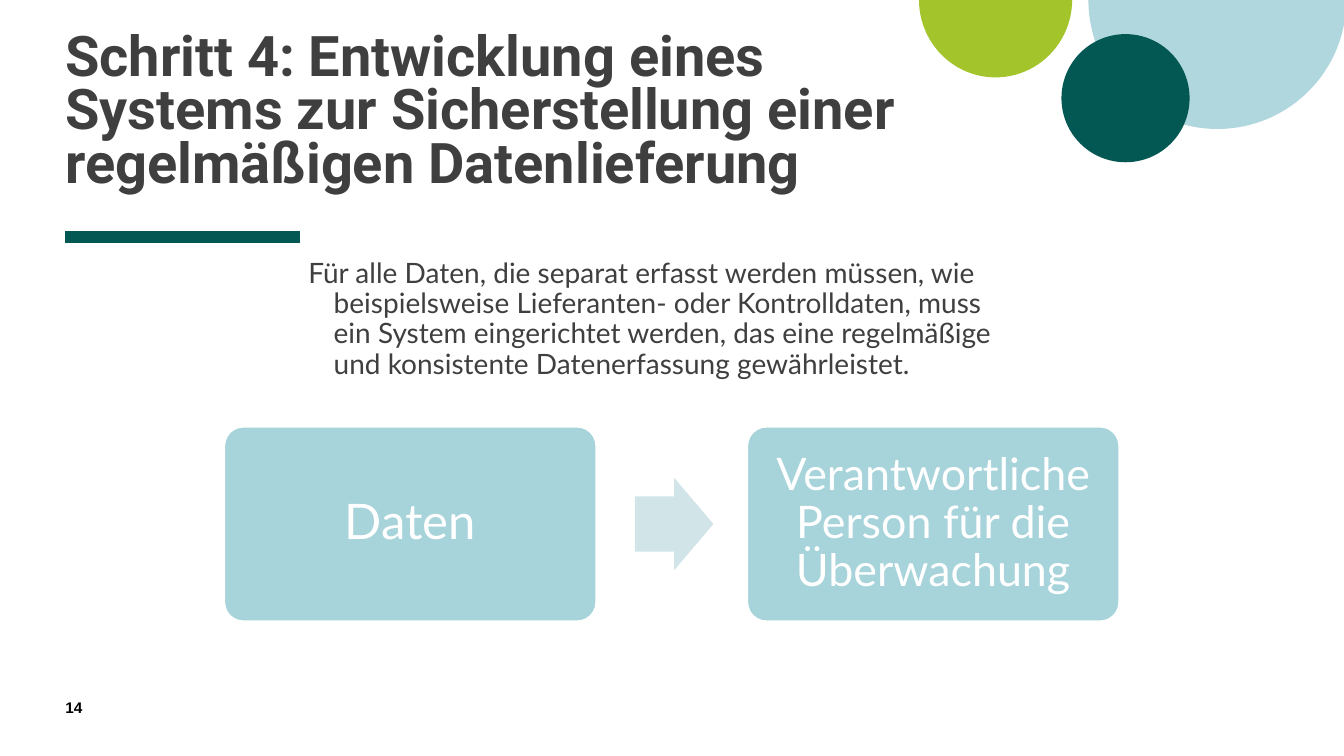
from lxml import etree
from pptx import Presentation
from pptx import util as u
from pptx.dml.color import RGBColor
from pptx.enum import shapes, text
from pptx.oxml.ns import qn

COLORS = {
    "ink": "3F3F3F",
    "black": "000000",
    "white": "FFFFFF",
    "petrol": "035854",
    "green": "A3C42A",
    "sky": "AFD7DD",
    "card": "A7D3DA",
    "arrow": "D1E5E9",
}
Preset = shapes.MSO_SHAPE
Anchor = text.MSO_ANCHOR


def color(name):
    return RGBColor.from_string(COLORS[name])


class SlideBuilder:
    def __init__(self, page):
        self.page = page

    def shape(self, preset, place, fill, adjust=(), outline=None):
        """Add a preset shape; place is left, top, width, height in cm."""
        shape = self.page.shapes.add_shape(preset, *map(u.Cm, place))
        shape.shadow.inherit = False
        shape.fill.solid()
        shape.fill.fore_color.rgb = color(fill)
        if outline:
            shape.line.color.rgb = color(outline)
            shape.line.width = u.Pt(2)
        else:
            shape.line.fill.background()
        for index, value in enumerate(adjust):
            shape.adjustments[index] = value
        return shape

    def line(self, left, top, right, tint, width):
        line = self.page.shapes.add_connector(
            shapes.MSO_CONNECTOR.STRAIGHT,
            u.Cm(left), u.Cm(top), u.Cm(right), u.Cm(top))
        line.line.color.rgb = color(tint)
        line.line.width = u.Pt(width)
        etree.SubElement(line.element.spPr, qn("a:effectLst"))

    def set_text(self, box, lines, font, size, tint, bold=False, spacing=1.0,
                 align=text.PP_ALIGN.LEFT, anchor=Anchor.TOP, insets=(0, 0, 0, 0)):
        """Fill the box with one paragraph; insets are left, top, right, bottom in cm."""
        frame = box.text_frame
        frame.word_wrap = True
        frame.vertical_anchor = anchor
        (frame.margin_left, frame.margin_top,
         frame.margin_right, frame.margin_bottom) = map(u.Cm, insets)
        para = frame.paragraphs[0]
        para.alignment = align
        para.line_spacing = spacing
        for index, line in enumerate(lines):
            if index:
                para.add_line_break()
            span = para.add_run()
            span.text = line
            span.font.name = font
            span.font.size = u.Pt(size)
            span.font.bold = bold
            span.font.color.rgb = color(tint)
        return para

    def textbox(self, place, lines, *style, **options):
        box = self.page.shapes.add_textbox(*map(u.Cm, place))
        return self.set_text(box, lines, *style, **options)

    def card(self, place, label, size):
        card = self.shape(Preset.ROUNDED_RECTANGLE, place, "card", [0.1], "white")
        self.set_text(card, [label], "Lato", size, "white", spacing=0.9,
                      align=text.PP_ALIGN.CENTER, anchor=Anchor.MIDDLE,
                      insets=[0.38] * 4)


def main():
    deck = Presentation()
    deck.slide_width, deck.slide_height = u.Cm(33.87), u.Cm(19.05)
    slide = SlideBuilder(deck.slides.add_slide(deck.slide_layouts[6]))

    slide.line(1.65, 5.97, 7.57, "petrol", 8)
    half_disc = [0, 108]
    slide.shape(Preset.PIE, (27.43, -3.25, 6.5, 6.5), "sky", half_disc)
    slide.shape(Preset.PIE, (23.16, -1.96, 3.86, 3.91), "green", half_disc)
    slide.shape(Preset.OVAL, (26.75, 0.86, 3.23, 3.23), "petrol")

    slide.textbox(
        (1.65, 0.76, 29.69, 4.14),
        ["Schritt 4: Entwicklung eines ",
         "Systems zur Sicherstellung einer regelmäßigen Datenlieferung"],
        "Roboto", 40, "ink", bold=True, spacing=0.8, anchor=Anchor.BOTTOM)

    body = slide.textbox(
        (7.14, 6.4, 18.31, 4.93),
        ["Für alle Daten, die separat erfasst werden müssen, wie beispielsweise "
         "Lieferanten- oder Kontrolldaten, muss ein System eingerichtet werden, "
         "das eine regelmäßige und konsistente Datenerfassung gewährleistet."],
        "Lato", 20, "ink", spacing=0.9, insets=(0, 0.13, 0, 0))
    properties = body._p.get_or_add_pPr()
    properties.set("marL", str(u.Cm(1.27)))
    properties.set("indent", str(-u.Cm(0.64)))

    slide.textbox((1.65, 17.58, 1.45, 0.69), ["14"], "Arial", 11, "black", bold=True)

    left, top, width, height, step = 5.64, 10.74, 9.4, 4.93, 13.18
    cards = [("Daten", 35), ("Verantwortliche Person für die Überwachung", 32)]
    for index, (label, size) in enumerate(cards):
        slide.card((left + index * step, top, width, height), label, size)
    arrow_height = 2.33
    slide.shape(Preset.RIGHT_ARROW,
                (16, top + (height - arrow_height) / 2, 1.98, arrow_height),
                "arrow", [0.6, 0.5])

    deck.save("out.pptx")


if __name__ == "__main__":
    main()
